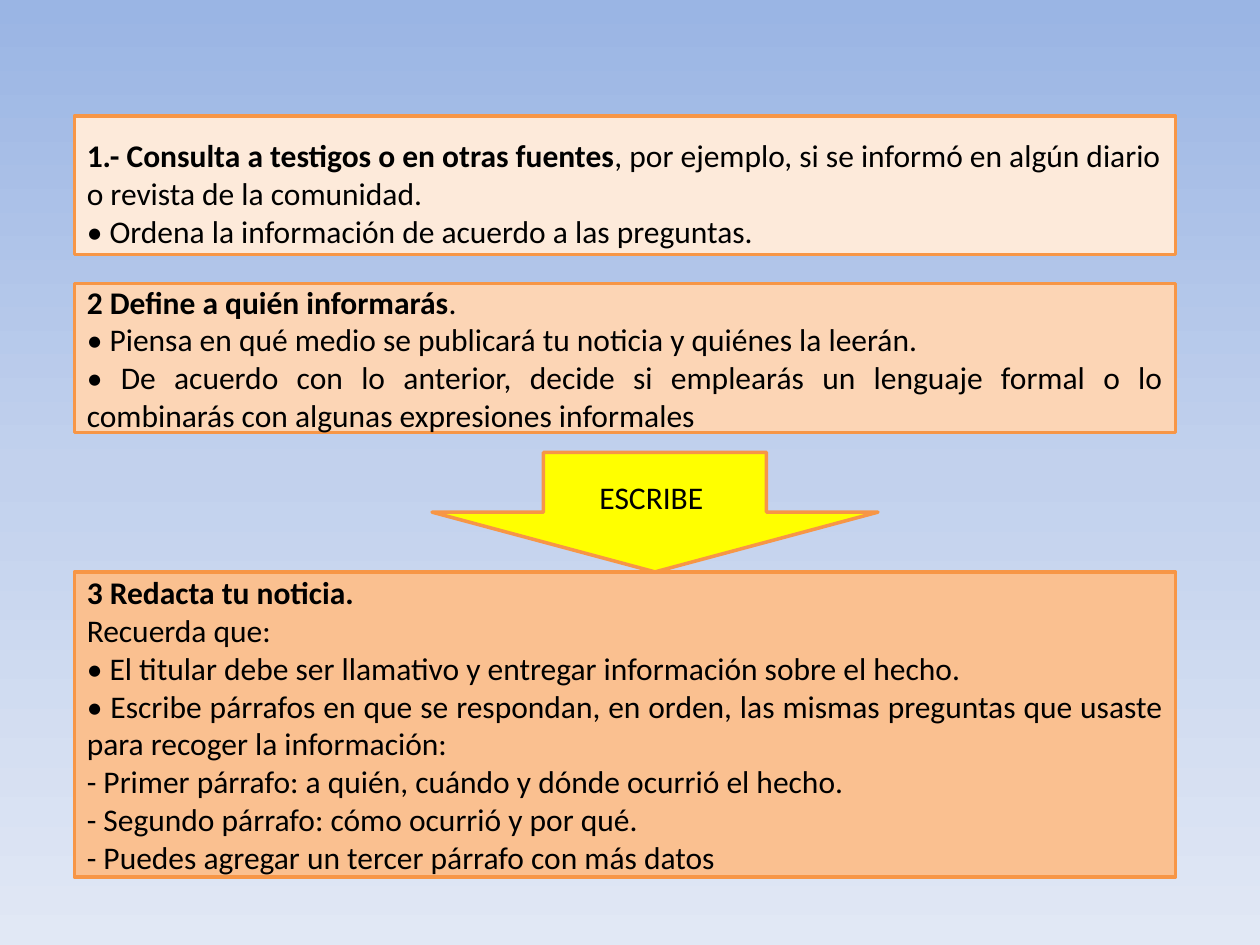
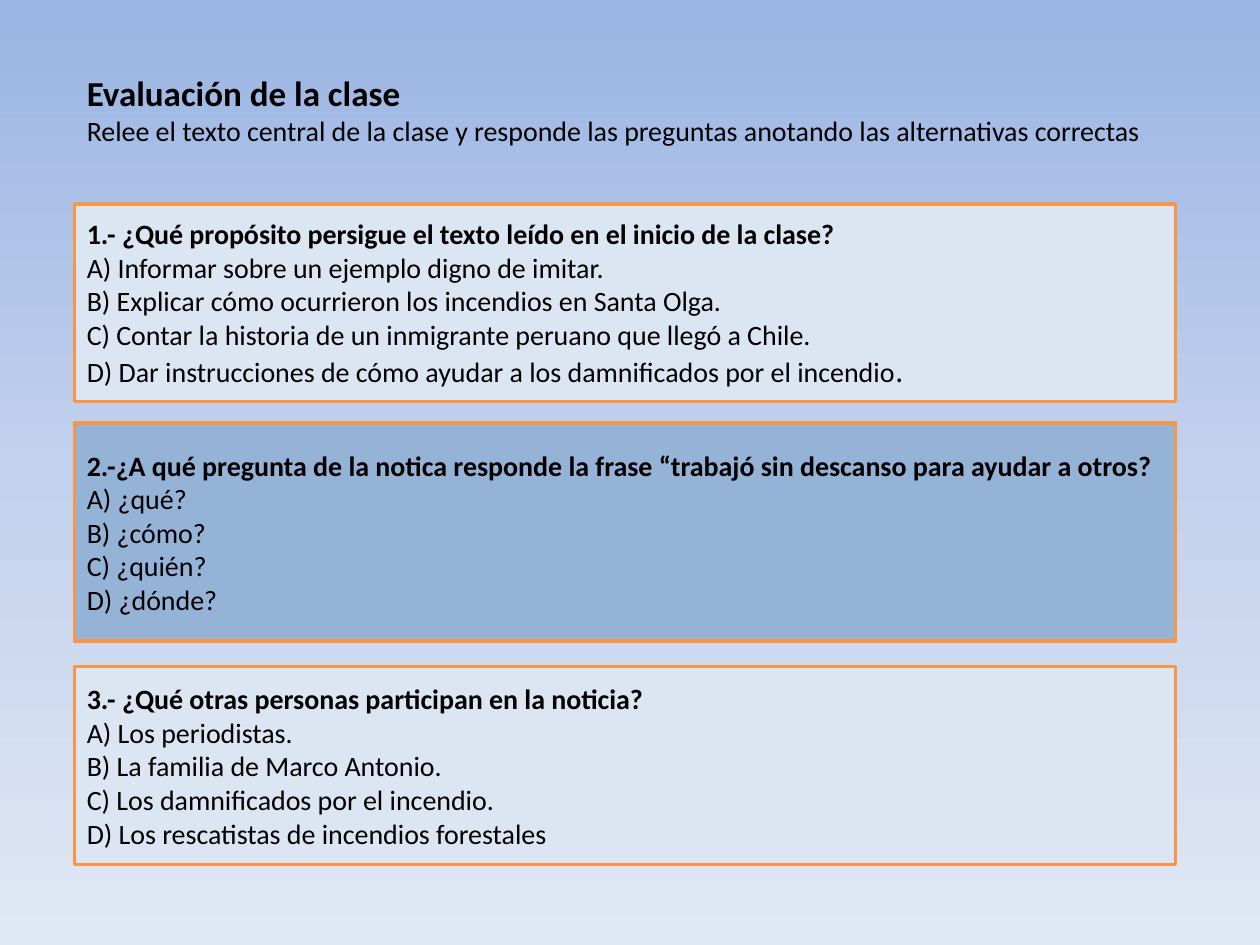
from copy import deepcopy

from pptx import Presentation
from pptx.dml.color import RGBColor
from pptx.enum.shapes import MSO_SHAPE as Preset
from pptx.enum.text import MSO_ANCHOR as Anchor, PP_ALIGN as Align
from pptx.oxml.ns import qn
from pptx.util import Cm, Pt

# Content: a paragraph is a tuple of runs; the first run of each block is bold
STEPS = [
    [("1.- Consulta a testigos o en otras fuentes",
      ", por ejemplo, si se informó en algún diario o revista de la comunidad."),
     ("• Ordena la información de acuerdo a las preguntas.",)],
    [("2 Define a quién informarás", ". "),
     ("• Piensa en qué medio se publicará tu noticia y quiénes la leerán. ",),
     ("• De acuerdo con lo anterior, decide si emplearás un lenguaje formal "
      "o lo combinarás con algunas expresiones informales",)],
    [("3 Redacta tu noticia. ",),
     ("Recuerda que:",),
     ("• El titular debe ser llamativo y entregar información sobre el hecho.",),
     ("• Escribe párrafos en que se respondan, en orden, las mismas preguntas "
      "que usaste para recoger la información:",),
     ("- Primer párrafo: a quién, cuándo y dónde ocurrió el hecho.",),
     ("- Segundo párrafo: cómo ocurrió y por qué.",),
     ("- Puedes agregar un tercer párrafo con más datos",)],
]
WRITE_CUE = [("ESCRIBE ",)]

EVALUATION = [
    ("Evaluación de la clase",),
    ("Relee el texto central de la clase y responde las preguntas "
     "anotando las alternativas correctas",),
]
QUESTIONS = [
    [("1.- ¿Qué propósito persigue el texto leído en el inicio de la clase?",),
     ("A) Informar sobre un ejemplo digno de imitar.",),
     ("B) Explicar cómo ocurrieron los incendios en Santa Olga.",),
     ("C) Contar la historia de un inmigrante peruano que llegó a Chile.",),
     ("D) Dar instrucciones de cómo ayudar a los damnificados por el incendio", ".")],
    [("2.-¿A qué pregunta de la notica responde la frase "
      "“trabajó sin descanso para ayudar a otros?",),
     ("A) ¿qué?",), ("B) ¿cómo?",), ("C) ¿quién?",), ("D) ¿dónde?",)],
    [("3.- ¿Qué otras personas participan en la noticia?",),
     ("A) Los periodistas.",),
     ("B) La familia de Marco Antonio.",),
     ("C) Los damnificados por el incendio.",),
     ("D) Los rescatistas de incendios forestales",)],
]

# Shared style
FONT = "Calibri"
STEP_SIZE, QUESTION_SIZE, TITLE_SIZE, TAIL_SIZE = 18, 16, 20, 18
BLACK = RGBColor(0x00, 0x00, 0x00)
ORANGE = RGBColor(0xF7, 0x96, 0x46)
YELLOW = RGBColor(0xFF, 0xFF, 0x00)
STEP_FILLS = [RGBColor(0xFD, 0xEA, 0xDA), RGBColor(0xFC, 0xD5, 0xB5),
              RGBColor(0xFA, 0xC0, 0x90)]
PALE_BLUE = RGBColor(0xDC, 0xE6, 0xF2)
MID_BLUE = RGBColor(0x95, 0xB3, 0xD7)
QUESTION_FILLS = [PALE_BLUE, MID_BLUE, PALE_BLUE]
SKY = [RGBColor(0x9A, 0xB5, 0xE4), RGBColor(0xC2, 0xD1, 0xED),
       RGBColor(0xE1, 0xE8, 0xF5)]

# Layout in centimetres: (top, height) of each row
LEFT, WIDTH = 1.5, 22.2
STEP_ROWS = [(2.34, 2.79), (5.72, 3.0), (11.53, 6.15)]
QUESTION_ROWS = [(4.11, 3.99), (8.53, 4.39), (13.44, 3.99)]
ARROW_AREA = (8.71, 9.12, 8.99, 2.41)
TITLE_AREA = (LEFT, 1.32, 22.4, 2.57)
FIRST_STEP_INSET = 0.43


def add_sky_slide(deck):
    slide = deck.slides.add_slide(deck.slide_layouts[6])
    fill = slide.background.fill
    fill.gradient()
    fill.gradient_angle = 270
    stops = next(slide.element.iter(qn("a:gsLst")))
    stops.insert(1, deepcopy(stops[0]))
    for number, (stop, color) in enumerate(zip(fill.gradient_stops, SKY)):
        stop.position = number / (len(SKY) - 1)
        stop.color.rgb = color
    return slide


def write(frame, paragraphs, size, align, bold_heading=True):
    frame.word_wrap = True
    for row, runs in enumerate(paragraphs):
        paragraph = frame.paragraphs[0] if row == 0 else frame.add_paragraph()
        paragraph.alignment = align
        for column, text in enumerate(runs):
            run = paragraph.add_run()
            run.text = text
            run.font.name = FONT
            run.font.size = Pt(TAIL_SIZE if column else size)
            run.font.bold = bold_heading and row == column == 0
            run.font.color.rgb = BLACK


def add_panel(slide, preset, area, color):
    panel = slide.shapes.add_shape(preset, *map(Cm, area))
    panel.shadow.inherit = False
    panel.fill.solid()
    panel.fill.fore_color.rgb = color
    panel.line.color.rgb = ORANGE
    panel.line.width = Pt(2)
    panel.text_frame.vertical_anchor = Anchor.MIDDLE
    return panel.text_frame


def add_rows(slide, rows, fills, blocks, size):
    frames = []
    for (top, height), color, block in zip(rows, fills, blocks):
        frame = add_panel(slide, Preset.RECTANGLE, (LEFT, top, WIDTH, height), color)
        write(frame, block, size, Align.JUSTIFY)
        frames.append(frame)
    return frames


def main():
    deck = Presentation()
    deck.slide_width, deck.slide_height = Cm(25.4), Cm(19.05)

    # Writing steps, with the arrow that leads to the third one
    steps = add_sky_slide(deck)
    first_step = add_rows(steps, STEP_ROWS, STEP_FILLS, STEPS, STEP_SIZE)[0]
    first_step.margin_top = Cm(FIRST_STEP_INSET)
    for paragraph in first_step.paragraphs:
        paragraph.alignment = Align.LEFT
    arrow = add_panel(steps, Preset.DOWN_ARROW, ARROW_AREA, YELLOW)
    write(arrow, WRITE_CUE, STEP_SIZE, Align.CENTER, bold_heading=False)

    # Class evaluation
    evaluation = add_sky_slide(deck)
    title = evaluation.shapes.add_textbox(*map(Cm, TITLE_AREA)).text_frame
    write(title, EVALUATION, QUESTION_SIZE, Align.LEFT)
    title.paragraphs[0].runs[0].font.size = Pt(TITLE_SIZE)
    add_rows(evaluation, QUESTION_ROWS, QUESTION_FILLS, QUESTIONS, QUESTION_SIZE)

    deck.save("out.pptx")


if __name__ == "__main__":
    main()
